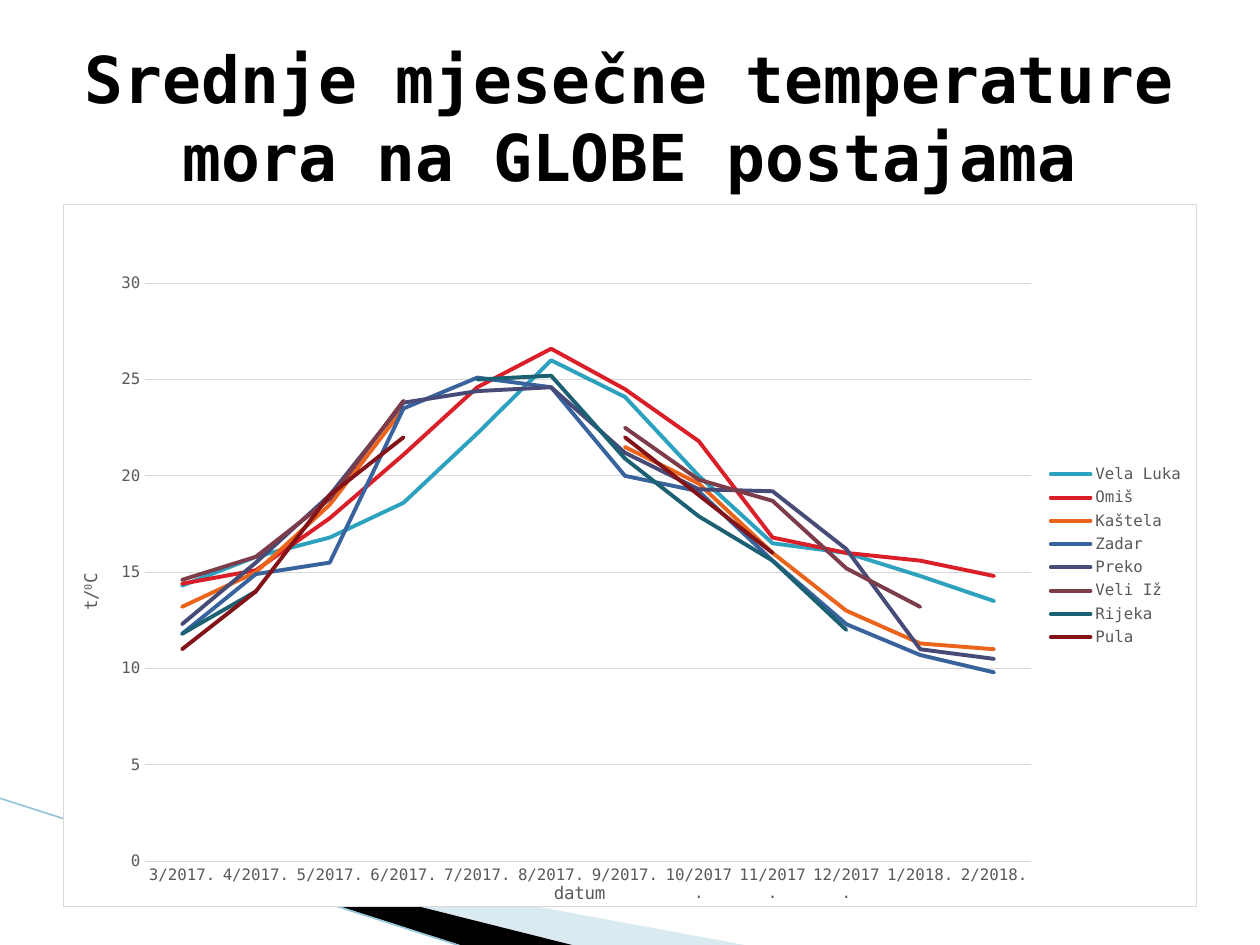
from lxml.etree import SubElement
from pptx import Presentation
from pptx.chart.data import CategoryChartData
from pptx.dml.color import RGBColor
from pptx.enum.chart import XL_CHART_TYPE, XL_LEGEND_POSITION, XL_TICK_MARK
from pptx.enum.shapes import MSO_CONNECTOR
from pptx.enum.text import MSO_ANCHOR, PP_ALIGN
from pptx.oxml import parse_xml
from pptx.oxml.ns import nsdecls, qn
from pptx.util import Pt

PX = 914400 / 126
FONT = "DejaVu Sans Mono"
GRAY, RULE = "595959", "D9D9D9"

MONTHS = [f"{month}/2017." for month in range(3, 13)] + ["1/2018.", "2/2018."]
STATIONS = [
    ("Vela Luka", "2DA2BF", [14.3, 15.8, 16.8, 18.6, 22.2, 26, 24.1, 20, 16.5, 16, 14.8, 13.5]),
    ("Omiš", "DA1F28", [14.4, 15.1, 17.8, 21.1, 24.6, 26.6, 24.5, 21.8, 16.8, 16, 15.6, 14.8]),
    ("Kaštela", "EB641B", [13.2, 15, 18.5, 23.5, None, None, 21.5, 19.6, 16, 13, 11.3, 11]),
    ("Zadar", "39639D", [11.8, 14.9, 15.5, 23.5, 25.1, 24.6, 20, 19.2, 15.6, 12.3, 10.7, 9.8]),
    ("Preko", "474B78", [12.3, 15.5, 19, 23.8, 24.4, 24.6, 21.2, 19.3, 19.2, 16.2, 11, 10.5]),
    ("Veli Iž", "7D3C4A", [14.6, 15.8, 18.8, 23.9, None, None, 22.5, 19.8, 18.7, 15.2, 13.2, None]),
    ("Rijeka", "1B6173", [11.8, 14, None, None, 25, 25.2, 20.9, 17.9, 15.6, 12, None, None]),
    ("Pula", "831318", [11, 14, 19, 22, None, None, 22, 19, 16, None, None, 11]),
]


def px(*lengths):
    return [round(length * PX) for length in lengths]


def color(value):
    return RGBColor.from_string(value)


def apply(target, values):
    for name, value in values.items():
        setattr(target, name, value)


def set_font(font, size, value, bold=False):
    apply(font, {"name": FONT, "size": Pt(size), "bold": bold})
    font.color.rgb = color(value)


def set_line(line, value, width):
    line.color.rgb = color(value)
    line.width = Pt(width)


def set_layout(element, index, **places):
    """Place a chart part by fractions of the chart area."""
    for layout in element.findall(qn("c:layout")):
        element.remove(layout)
    modes = {"xMode": "edge", "yMode": "edge"}
    if "w" in places:
        modes = {"layoutTarget": "inner", **modes}
    rows = "".join(f'<c:{key} val="{value}"/>' for key, value in {**modes, **places}.items())
    element.insert(index, parse_xml(
        f'<c:layout {nsdecls("c")}><c:manualLayout>{rows}</c:manualLayout></c:layout>'))


class SlideBuilder:
    def __init__(self, slide):
        self.slide = slide

    def wedge(self, points, fill, opacity=100):
        builder = self.slide.shapes.build_freeform(*points[0], scale=PX)
        builder.add_line_segments(points[1:], close=True)
        shape = builder.convert_to_shape()
        shape.shadow.inherit = False
        shape.fill.solid()
        shape.fill.fore_color.rgb = color(fill)
        shape.line.fill.background()
        if opacity < 100:
            fill_color = shape._element.spPr.find(".//" + qn("a:srgbClr"))
            SubElement(fill_color, qn("a:alpha")).set("val", str(opacity * 1000))

    def line(self, start, end, value, width):
        connector = self.slide.shapes.add_connector(
            MSO_CONNECTOR.STRAIGHT, *px(*start, *end))
        set_line(connector.line, value, width)
        SubElement(connector._element.spPr, qn("a:effectLst"))

    def title(self, box, text, size):
        frame = self.slide.shapes.add_textbox(*px(*box)).text_frame
        apply(frame, {"word_wrap": True, "vertical_anchor": MSO_ANCHOR.MIDDLE})
        paragraph = frame.paragraphs[0]
        paragraph.alignment = PP_ALIGN.CENTER
        run = paragraph.add_run()
        run.text = text
        set_font(run.font, size, "000000", True)

    def axis_title(self, axis, parts, x, y, rotation=0):
        title = axis.axis_title
        frame = title.text_frame
        frame._txBody.bodyPr.set("rot", str(rotation * 60000))
        for text, raised in parts:
            run = frame.paragraphs[0].add_run()
            run.text = text
            set_font(run.font, 10, GRAY)
            if raised:
                run.font._element.set("baseline", "30000")
        set_layout(title._element, 1, x=x, y=y)

    def line_chart(self, box, categories, rows):
        data = CategoryChartData()
        data.categories = categories
        for name, _, values in rows:
            data.add_series(name, values)
        chart = self.slide.shapes.add_chart(XL_CHART_TYPE.LINE, *px(*box), data).chart
        chart.has_title = False
        set_font(chart.font, 10, "000000")
        chart.plots[0].vary_by_categories = False

        # Chart area and plot area
        chart_space = chart._chartSpace
        chart_space.find(qn("c:chart")).addnext(parse_xml(
            f'<c:spPr {nsdecls("c", "a")}><a:solidFill><a:srgbClr val="FFFFFF"/></a:solidFill>'
            f'<a:ln w="9525"><a:solidFill><a:srgbClr val="{RULE}"/></a:solidFill></a:ln></c:spPr>'))
        set_layout(chart_space.find(".//" + qn("c:plotArea")), 0,
                   x=0.072, y=0.112, w=0.782, h=0.823)

        # Series
        for series, (_, value, _) in zip(chart.plots[0].series, rows):
            series.smooth = False
            set_line(series.format.line, value, 2.25)
            series.format.line._get_or_add_ln().set("cap", "rnd")

        # Axes
        months, degrees = chart.category_axis, chart.value_axis
        for axis in (months, degrees):
            apply(axis, {"major_tick_mark": XL_TICK_MARK.NONE,
                         "minor_tick_mark": XL_TICK_MARK.NONE})
            set_font(axis.tick_labels.font, 9, GRAY)
        set_line(months.format.line, RULE, 0.75)
        apply(degrees, {"minimum_scale": 0, "maximum_scale": 30, "major_unit": 5,
                        "has_major_gridlines": True})
        degrees.format.line.fill.background()
        set_line(degrees.major_gridlines.format.line, RULE, 0.75)
        self.axis_title(months, [("datum", False)], 0.43, 0.96)
        self.axis_title(degrees, [("t/", False), ("0", True), ("C", False)], 0.01, 0.52, -90)

        # Legend
        chart.has_legend = True
        apply(chart.legend, {"position": XL_LEGEND_POSITION.RIGHT, "include_in_layout": False})
        set_font(chart.legend.font, 9, GRAY)


def main():
    presentation = Presentation()
    apply(presentation, dict(zip(("slide_width", "slide_height"), px(1260, 945))))
    builder = SlideBuilder(presentation.slides.add_slide(presentation.slide_layouts[6]))

    # Corner decoration
    builder.wedge([(69, 820), (750, 946), (575, 946), (69, 819)], "A0CBDC", 40)
    builder.wedge([(67, 818), (576, 946), (469, 948), (68, 819)], "000000")
    builder.line((-1, 798), (467, 948), "97C5D8", 0.95)

    # Title and temperature chart
    builder.title((63, 38, 1134, 157),
                  "Srednje mjesečne temperature mora na GLOBE postajama", 36.9)
    builder.line_chart((63, 204, 1134, 705), MONTHS, STATIONS)

    presentation.save("out.pptx")


if __name__ == "__main__":
    main()
